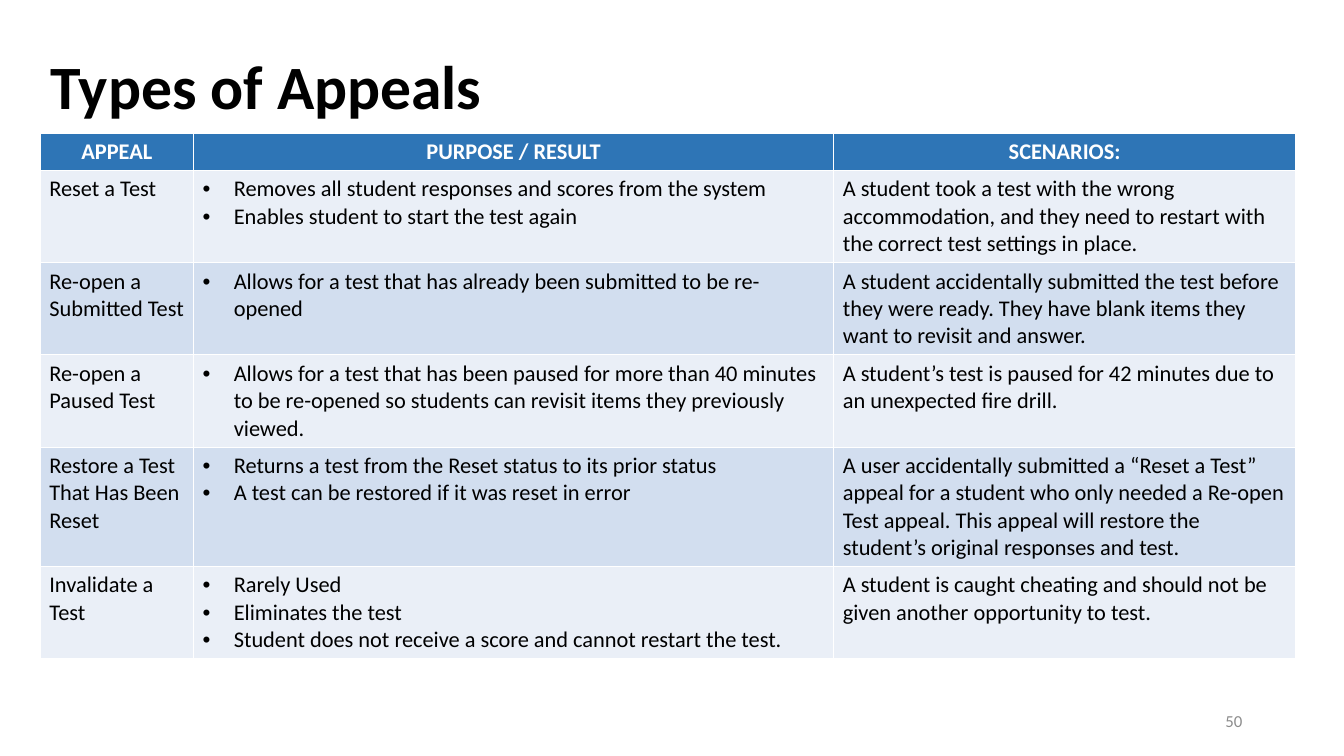
from lxml import etree
from pptx import Presentation, util as u
from pptx.dml import color
from pptx.enum import text
from pptx.oxml import ns

COLORS = {
    "header": "2E75B6",
    "light": "EAEFF7",
    "dark": "D2DEEF",
    "white": "FFFFFF",
    "black": "000000",
    "gray": "8C8C8C",
}
HEADINGS = ["APPEAL", "PURPOSE / RESULT", "SCENARIOS:"]
APPEALS = [
    ("Reset a Test",
     ["Removes all student responses and scores from the system",
      "Enables student to start the test again"],
     "A student took a test with the wrong accommodation, and they need to restart "
     "with the correct test settings in place."),
    ("Re-open a Submitted Test",
     ["Allows for a test that has already been submitted to be re-opened"],
     "A student accidentally submitted the test before they were ready. "
     "They have blank items they want to revisit and answer."),
    ("Re-open a Paused Test",
     ["Allows for a test that has been paused for more than 40 minutes to be re-opened "
      "so students can revisit items they previously viewed."],
     "A student’s test is paused for 42 minutes due to an unexpected fire drill."),
    ("Restore a Test That Has Been Reset",
     ["Returns a test from the Reset status to its prior status",
      "A test can be restored if it was reset in error"],
     "A user accidentally submitted a “Reset a Test” appeal for a student who only needed "
     "a Re-open Test appeal. This appeal will restore the student’s original responses and test."),
    ("Invalidate a Test",
     ["Rarely Used", "Eliminates the test",
      "Student does not receive a score and cannot restart the test."],
     "A student is caught cheating and should not be given another opportunity to test."),
]


def rgb(name):
    return color.RGBColor.from_string(COLORS[name])


def write(para, words, size=16, fill="black", bold=False, align="LEFT", bullet=False, spacing=None):
    if bullet:
        properties = para._p.get_or_add_pPr()
        indent = u.Inches(0.31)
        properties.set("marL", str(indent))
        properties.set("indent", str(-indent))
        etree.SubElement(properties, ns.qn("a:buFont")).set("typeface", "Arial")
        etree.SubElement(properties, ns.qn("a:buChar")).set("char", "•")
    para.alignment = getattr(text.PP_ALIGN, align)
    if spacing:
        para.line_spacing = spacing
    span = para.add_run()
    span.text = words
    span.font.name = "Calibri"
    span.font.size = u.Pt(size)
    span.font.bold = bold
    span.font.color.rgb = rgb(fill)


class SlideBuilder:
    def __init__(self, deck, columns=100, rows=100):
        self.column = deck.slide_width / columns
        self.row = deck.slide_height / rows
        self.page = deck.slides.add_slide(deck.slide_layouts[5])

    def across(self, columns):
        return u.Emu(round(columns * self.column))

    def down(self, rows):
        return u.Emu(round(rows * self.row))

    def area(self, left, top, width, height):
        return self.across(left), self.down(top), self.across(width), self.down(height)

    def title(self, words, *area):
        box = self.page.shapes.title
        box.left, box.top, box.width, box.height = self.area(*area)
        box.text_frame.vertical_anchor = text.MSO_ANCHOR.MIDDLE
        write(box.text_frame.paragraphs[0], words, size=44, bold=True, spacing=0.9)

    def label(self, words, *area, **style):
        frame = self.page.shapes.add_textbox(*self.area(*area)).text_frame
        frame.word_wrap = True
        frame.vertical_anchor = text.MSO_ANCHOR.MIDDLE
        write(frame.paragraphs[0], words, **style)

    def border(self, cell):
        properties = cell._tc.get_or_add_tcPr()
        for place, side in enumerate(("lnL", "lnR", "lnT", "lnB")):
            line = etree.Element(ns.qn(f"a:{side}"), w=str(u.Pt(1)))
            solid = etree.SubElement(line, ns.qn("a:solidFill"))
            etree.SubElement(solid, ns.qn("a:srgbClr")).set("val", COLORS["white"])
            properties.insert(place, line)

    def cell(self, cell, content, fill, **style):
        cell.margin_left = cell.margin_right = u.Inches(0.09)
        cell.margin_top = cell.margin_bottom = u.Inches(0.05)
        cell.fill.solid()
        cell.fill.fore_color.rgb = rgb(fill)
        self.border(cell)
        bullet = isinstance(content, list)
        frame = cell.text_frame
        for index, words in enumerate(content if bullet else [content]):
            para = frame.add_paragraph() if index else frame.paragraphs[0]
            write(para, words, bullet=bullet, **style)

    def table(self, records, left, top, widths, heights):
        area = self.area(left, top, sum(widths), sum(heights))
        table = self.page.shapes.add_table(len(heights), len(widths), *area).table
        for column, width in zip(table.columns, widths):
            column.width = self.across(width)
        for index, (row, height, record) in enumerate(zip(table.rows, heights, records)):
            row.height = self.down(height)
            fill = "light" if index % 2 else "dark"
            style = {}
            if index == 0:
                fill = "header"
                style = {"fill": "white", "bold": True, "align": "CENTER"}
            for cell, content in zip(row.cells, record):
                self.cell(cell, content, **{"fill": fill}) if not style else self.heading(cell, content, fill, style)

    def heading(self, cell, content, background, style):
        self.cell(cell, content, background)
        para = cell.text_frame.paragraphs[0]
        para.clear()
        write(para, content, **style)


def main():
    deck = Presentation()
    deck.slide_width, deck.slide_height = u.Inches(13.33), u.Inches(7.5)
    slide = SlideBuilder(deck)
    slide.title("Types of Appeals", 3, 2.13, 86.27, 19.33)
    slide.label("50", 70.67, 92.67, 22.5, 5.33, size=12, fill="gray", align="RIGHT")
    slide.table([HEADINGS, *APPEALS], 3, 17.6,
                widths=[11.4, 47.64, 34.36],
                heights=[4.95, 12.2, 12.2, 12.2, 15.8, 12.2])
    deck.save("out.pptx")


if __name__ == "__main__":
    main()
